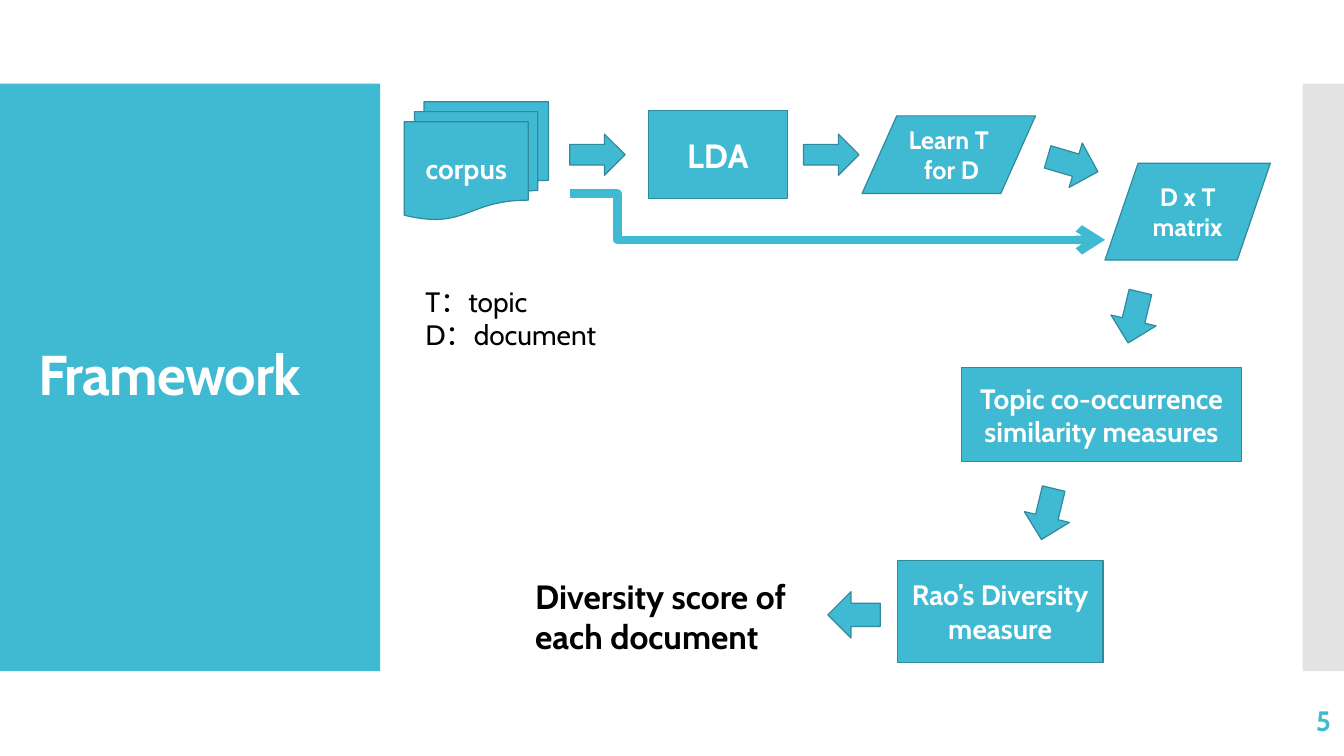
from dataclasses import dataclass

from lxml import etree
from pptx import Presentation
from pptx.dml.color import RGBColor
from pptx.enum import shapes, text
from pptx.oxml import ns
from pptx.util import Inches, Pt


@dataclass(frozen=True)
class Theme:
    font: str = "Cabin"
    accent: str = "40BAD2"
    outline: str = "2F8A9B"
    side: str = "C8C8C8"
    white: str = "FFFFFF"
    black: str = "000000"
    title: int = 40
    large: int = 24
    body: int = 20
    small: int = 18
    edge: float = 0.85
    route: float = 6


THEME = Theme()
KIND = shapes.MSO_SHAPE
ALIGN = text.PP_ALIGN
MIDDLE = text.MSO_ANCHOR.MIDDLE
TOP = text.MSO_ANCHOR.TOP

PANELS = [
    ((0, 0.83, 3.77, 5.83), THEME.accent, 100),
    ((12.92, 0.83, 0.42, 5.83), THEME.side, 50),
]

STEPS = [
    ("corpus", KIND.FLOWCHART_MULTIDOCUMENT, (4.01, 1.01, 1.43, 1.17), THEME.body),
    ("LDA", KIND.FLOWCHART_PROCESS, (6.43, 1.1, 1.38, 0.87), THEME.large),
    ("Learn T\n for D", KIND.FLOWCHART_DATA, (8.55, 1.15, 1.72, 0.77), THEME.small),
    ("D x T matrix", KIND.FLOWCHART_DATA, (10.96, 1.62, 1.64, 0.96), THEME.small),
    ("Topic co-occurrence similarity measures", KIND.FLOWCHART_PROCESS,
     (9.54, 3.65, 2.77, 0.93), THEME.body),
    ("Rao’s Diversity measure", KIND.FLOWCHART_PROCESS,
     (8.9, 5.56, 2.04, 1.01), THEME.body),
]

RIGHT_ARROWS = [(5.65, 1.33), (7.97, 1.33)]
TURNED_ARROWS = [
    (10.41, 1.37, 286.4),
    (11.02, 2.89, 13.6),
    (10.16, 4.84, 13.6),
    (8.24, 5.84, 90),
]
RIGHT_ARROW_SIZE = (0.55, 0.41)
TURNED_ARROW_SIZE = (0.46, 0.52)

CORPUS_ROUTE = (5.65, 1.92, 10.96, 2.38)
ROUTE_BEND_X = 6.12

LABELS = [
    ("Framework", (0.28, 1.23, 3.22, 5.03), THEME.title, THEME.white, True, ALIGN.LEFT, MIDDLE),
    ("5", (11.63, 6.95, 1.67, 0.4), THEME.body, THEME.accent, True, ALIGN.RIGHT, MIDDLE),
    ("Diversity score of each document", (5.21, 5.66, 2.76, 0.91),
     THEME.large, THEME.black, True, ALIGN.LEFT, TOP),
    ("T：topic\nD：document", (4.12, 2.77, 1.93, 0.77),
     THEME.body, THEME.black, False, ALIGN.LEFT, TOP),
]


def inches(values):
    return [Inches(value) for value in values]


def write(part, wording, size, color, bold, align, anchor):
    frame = part.text_frame
    frame.text = wording
    frame.word_wrap = True
    frame.vertical_anchor = anchor
    for paragraph in frame.paragraphs:
        paragraph.alignment = align
        for run in paragraph.runs:
            run.font.name = THEME.font
            run.font.size = Pt(size)
            run.font.bold = bold
            run.font.color.rgb = RGBColor.from_string(color)
    return frame


def add_block(slide, kind, box, color=THEME.accent, outlined=True):
    block = slide.shapes.add_shape(kind, *inches(box))
    block.shadow.inherit = False
    block.fill.solid()
    block.fill.fore_color.rgb = RGBColor.from_string(color)
    if outlined:
        block.line.color.rgb = RGBColor.from_string(THEME.outline)
        block.line.width = Pt(THEME.edge)
    else:
        block.line.fill.background()
    return block


def add_panel(slide, box, color, opacity):
    panel = add_block(slide, KIND.RECTANGLE, box, color, outlined=False)
    if opacity < 100:
        tint = panel.fill._xPr.find(".//" + ns.qn("a:srgbClr"))
        etree.SubElement(tint, ns.qn("a:alpha"), val=str(opacity * 1000))


def add_label(slide, wording, box, size, color, bold, align, anchor):
    label = slide.shapes.add_textbox(*inches(box))
    frame = write(label, wording, size, color, bold, align, anchor)
    if anchor == TOP:
        frame.auto_size = text.MSO_AUTO_SIZE.SHAPE_TO_FIT_TEXT
    if size == THEME.title:
        heading = frame.paragraphs[0]
        heading.line_spacing = 0.9
        heading.runs[0].font._element.set("spc", "-60")


def add_route(slide, ends, bend_x):
    route = slide.shapes.add_connector(shapes.MSO_CONNECTOR.ELBOW, *inches(ends))
    route.line.color.rgb = RGBColor.from_string(THEME.accent)
    route.line.width = Pt(THEME.route)
    properties = route._element.spPr
    bend = round((bend_x - ends[0]) / (ends[2] - ends[0]) * 100000)
    guides = properties.find(ns.qn("a:prstGeom")).get_or_add_avLst()
    etree.SubElement(guides, ns.qn("a:gd"), name="adj1", fmla=f"val {bend}")
    etree.SubElement(route.line._get_or_add_ln(), ns.qn("a:tailEnd"), type="arrow")
    etree.SubElement(properties, ns.qn("a:effectLst"))


def main():
    deck = Presentation()
    deck.slide_width, deck.slide_height = Inches(13.33), Inches(7.5)
    slide = deck.slides.add_slide(deck.slide_layouts[6])

    for panel in PANELS:
        add_panel(slide, *panel)
    for wording, kind, box, size in STEPS:
        step = add_block(slide, kind, box)
        write(step, wording, size, THEME.white, True, ALIGN.CENTER, MIDDLE)
    for corner in RIGHT_ARROWS:
        add_block(slide, KIND.RIGHT_ARROW, corner + RIGHT_ARROW_SIZE)
    for left, top, angle in TURNED_ARROWS:
        arrow = add_block(slide, KIND.DOWN_ARROW, (left, top) + TURNED_ARROW_SIZE)
        arrow.rotation = angle
    add_route(slide, CORPUS_ROUTE, ROUTE_BEND_X)
    for label in LABELS:
        add_label(slide, *label)

    deck.save("out.pptx")


if __name__ == "__main__":
    main()
